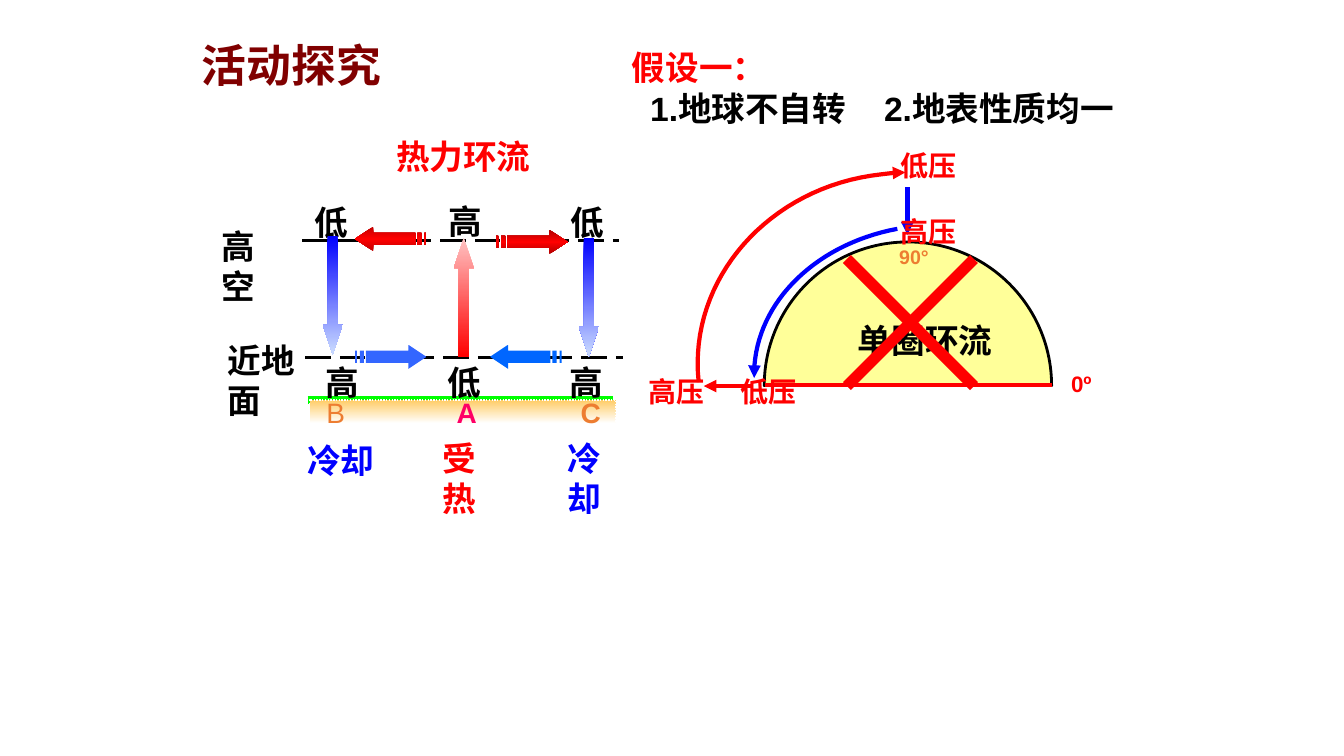
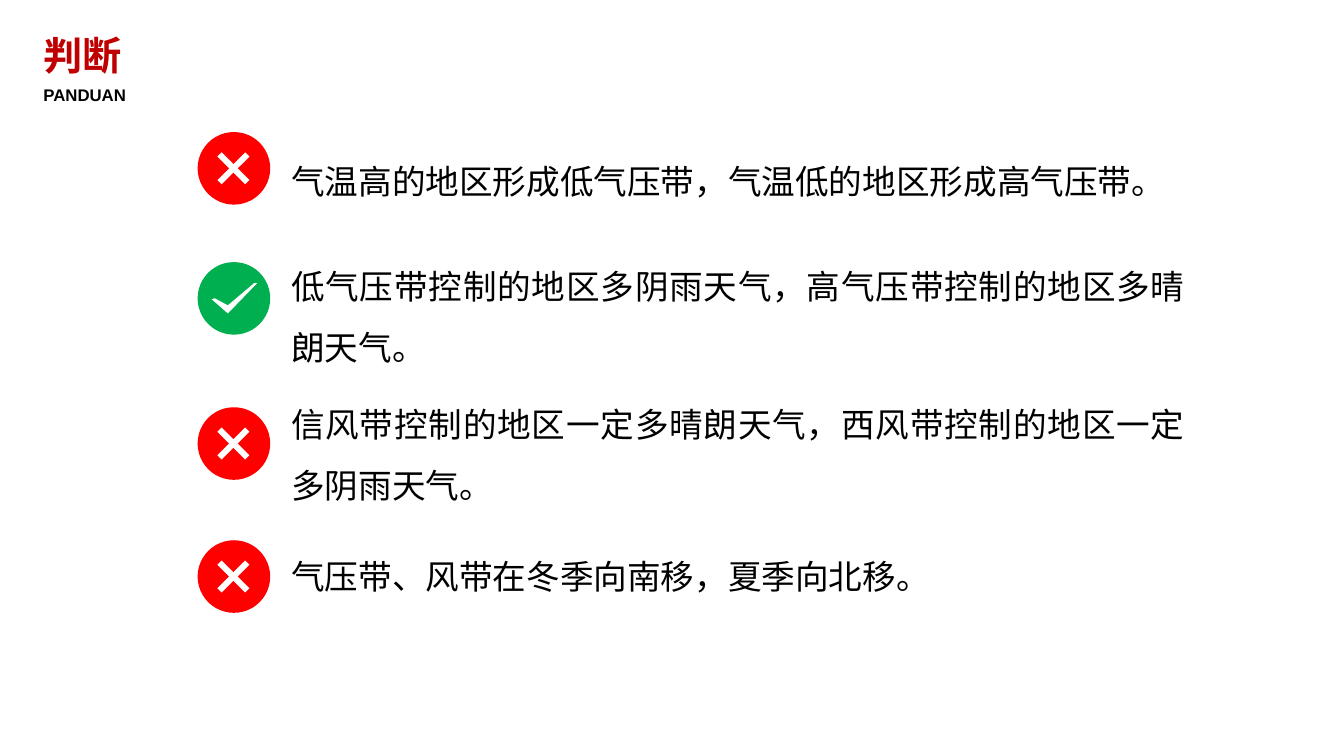
from typing import NamedTuple, Optional

from lxml import etree
from pptx import Presentation
from pptx.dml.color import RGBColor
from pptx.enum.dml import MSO_LINE
from pptx.enum.shapes import MSO_CONNECTOR, MSO_SHAPE
from pptx.enum.text import MSO_ANCHOR, PP_ALIGN
from pptx.oxml.ns import qn
from pptx.shapes.autoshape import Shape
from pptx.shapes.connector import Connector
from pptx.slide import Slide
from pptx.util import Pt

PX = 9144
LATIN = "Arial"
CJK = "Noto Sans CJK SC"
CJK_ALT = "Noto Sans CJK KR"
SERIF = "Times New Roman"
LEADING = 1.2
COLORS = {
    "black": "000000", "white": "FFFFFF", "red": "FF0000", "blue": "0000FF",
    "maroon": "800000", "crimson": "C00000", "orange": "ED7D31", "pink": "FF0066",
    "lime": "00FF00", "green": "00B050", "yellow": "FFFF99", "sand": "FFCC66",
    "pale_red": "FFC3C3", "pale_blue": "CCDDFF", "dark_red": "B20000",
    "brick": "C20000", "royal": "3366FF", "azure": "0066FF",
}
LEFT, CENTER, JUSTIFY = PP_ALIGN.LEFT, PP_ALIGN.CENTER, PP_ALIGN.JUSTIFY
TOP, MIDDLE = MSO_ANCHOR.TOP, MSO_ANCHOR.MIDDLE
LONG_DASH, DOTS = MSO_LINE.LONG_DASH, MSO_LINE.ROUND_DOT
STRAIGHT = MSO_CONNECTOR.STRAIGHT
OVAL, RECT, CHORD = MSO_SHAPE.OVAL, MSO_SHAPE.RECTANGLE, MSO_SHAPE.CHORD
UP, DOWN = MSO_SHAPE.UP_ARROW, MSO_SHAPE.DOWN_ARROW

Point = tuple[float, float]


class Box(NamedTuple):
    x: int
    y: int
    w: int
    h: int


class Label(NamedTuple):
    text: str
    box: Box
    color: str
    size: int = 24
    align: PP_ALIGN = LEFT
    bold: bool = True


class Wind(NamedTuple):
    x: int
    y: int
    leftward: bool
    stops: tuple[str, ...]


class Draft(NamedTuple):
    x: int
    y: int
    kind: MSO_SHAPE
    stops: tuple[str, ...]


class Statement(NamedTuple):
    text: str
    correct: bool
    mark_y: int
    box: Box
    leading: float = 1.8


def rgb(name: str) -> RGBColor:
    return RGBColor.from_string(COLORS[name])


def emu(*lengths: int) -> list[int]:
    return [n * PX for n in lengths]


def add_text(s: Slide, text: str, box: Box, *, color: str = "black", size: int = 24,
             bold: bool = True, align: PP_ALIGN = LEFT, anchor: MSO_ANCHOR = TOP,
             inset: bool = True, latin: str = LATIN, ea: str = CJK,
             leading: float = LEADING, indent: int = 0, tab: int = 0,
             first_color: Optional[str] = None) -> None:
    tf = s.shapes.add_textbox(*emu(*box)).text_frame
    tf.word_wrap = True
    tf.vertical_anchor = anchor
    if not inset:
        tf.margin_left = tf.margin_right = tf.margin_top = tf.margin_bottom = 0
    for i, line in enumerate(text.split("\n")):
        p = tf.add_paragraph() if i else tf.paragraphs[0]
        p.alignment = align
        p.line_spacing = Pt(round(size * leading, 1))
        p_pr = p._p.get_or_add_pPr()
        if i and indent:
            p_pr.set("indent", str(indent * PX))
        if i and tab:
            tabs = etree.SubElement(p_pr, qn("a:tabLst"))
            etree.SubElement(tabs, qn("a:tab"), pos=str(tab * PX), algn="l")
        r = p.add_run()
        r.text = line
        r.font.name, r.font.size, r.font.bold = latin, Pt(size), bold
        r.font.color.rgb = rgb(color if i or not first_color else first_color)
        etree.SubElement(r._r.get_or_add_rPr(), qn("a:ea"), typeface=ea)


def add_labels(s: Slide, labels: list[Label]) -> None:
    for lb in labels:
        add_text(s, lb.text, lb.box, color=lb.color, size=lb.size,
                 align=lb.align, bold=lb.bold)


def paint(sp: Shape, fill: Optional[str] = None, line: Optional[str] = None,
          width: int = 1) -> None:
    sp.shadow.inherit = False
    if fill:
        sp.fill.solid()
        sp.fill.fore_color.rgb = rgb(fill)
    else:
        sp.fill.background()
    if line:
        sp.line.color.rgb = rgb(line)
        sp.line.width = Pt(width)
    else:
        sp.line.fill.background()


def paint_gradient(sp: Shape, stops: tuple[str, ...]) -> None:
    paint(sp)
    sp.fill.gradient()
    sp.fill.gradient_angle = 270
    gs_list = sp._element.spPr.find(qn("a:gradFill")).find(qn("a:gsLst"))
    for gs in list(gs_list):
        gs_list.remove(gs)
    for i, name in enumerate(stops):
        gs = etree.SubElement(gs_list, qn("a:gs"), pos=str(100000 * i // (len(stops) - 1)))
        etree.SubElement(gs, qn("a:srgbClr"), val=COLORS[name])


def add_shape(s: Slide, kind: MSO_SHAPE, box: Box, fill: Optional[str] = None,
              line: Optional[str] = None, width: int = 1) -> Shape:
    sp = s.shapes.add_shape(kind, *emu(*box))
    paint(sp, fill, line, width)
    return sp


def add_outline(s: Slide, contours: list[list[Point]], close: bool = True) -> Shape:
    scaled = [[(x * PX, y * PX) for x, y in points] for points in contours]
    fb = s.shapes.build_freeform(*scaled[0][0])
    for i, points in enumerate(scaled):
        if i:
            fb.move_to(*points[0])
        fb.add_line_segments(points[1:], close=close)
    return fb.convert_to_shape()


def add_arrowhead(sp: Shape | Connector) -> None:
    etree.SubElement(sp._element.spPr.find(qn("a:ln")), qn("a:tailEnd"), type="triangle")


def add_line(s: Slide, start: tuple[int, int], end: tuple[int, int], color: str,
             width: float, dash: Optional[MSO_LINE] = None, arrow: bool = False) -> None:
    c = s.shapes.add_connector(STRAIGHT, *emu(*start, *end))
    c.line.color.rgb = rgb(color)
    c.line.width = Pt(width)
    if dash:
        c.line.dash_style = dash
    if arrow:
        add_arrowhead(c)
    etree.SubElement(c._element.spPr, qn("a:effectLst"))


def bezier(a: Point, b: Point, c: Point, d: Point, steps: int = 32) -> list[Point]:
    def at(t: float, i: int) -> float:
        u = 1 - t
        return u**3 * a[i] + 3 * u * u * t * b[i] + 3 * u * t * t * c[i] + t**3 * d[i]
    return [(at(k / steps, 0), at(k / steps, 1)) for k in range(steps + 1)]


def add_curve_arrow(s: Slide, points: list[Point], color: str) -> None:
    sp = add_outline(s, [points], close=False)
    paint(sp, line=color, width=3)
    add_arrowhead(sp)


def add_wind(s: Slide, wind: Wind) -> None:
    length, top, bottom = 71, 6, 18
    head = [(53, 0), (53, top), (11, top), (11, bottom), (53, bottom), (53, 24), (length, 12)]
    bars = [[(a, top), (a, bottom), (b, bottom), (b, top)] for a, b in ((5, 9), (0, 2))]
    contours = [[(wind.x + (length - x if wind.leftward else x), wind.y + y)
                 for x, y in points] for points in [head, *bars]]
    paint_gradient(add_outline(s, contours), wind.stops)


def add_draft(s: Slide, draft: Draft) -> None:
    sp = add_shape(s, draft.kind, Box(draft.x, draft.y, 20, 118))
    sp.adjustments[0], sp.adjustments[1] = 0.5, 1.5
    paint_gradient(sp, draft.stops)


def draw_thermal_circulation(s: Slide) -> None:
    add_line(s, (300, 239), (614, 239), "black", 2.25, LONG_DASH)
    add_line(s, (303, 355), (618, 355), "black", 2.25, LONG_DASH)
    add_line(s, (305, 397), (608, 397), "lime", 6)
    add_labels(s, [
        Label("近地面", Box(216, 332, 106, 91), "black"),
        Label("高空", Box(210, 219, 60, 91), "black"),
        Label("冷却", Box(295, 432, 136, 50), "blue"),
        Label("受热", Box(429, 429, 71, 91), "red"),
        Label("冷却", Box(553, 429, 71, 91), "blue"),
        Label("低", Box(302, 195, 52, 50), "black", align=CENTER),
        Label("高", Box(435, 194, 52, 50), "black", align=CENTER),
        Label("低", Box(556, 195, 52, 50), "black", align=CENTER),
    ])
    for wind in (
        Wind(492, 228, False, ("dark_red", "red", "dark_red")),
        Wind(352, 225, True, ("brick", "red", "brick")),
        Wind(352, 342, False, ("royal", "royal")),
        Wind(486, 342, True, ("azure", "azure")),
    ):
        add_wind(s, wind)
    ground = add_shape(s, RECT, Box(307, 397, 304, 23))
    paint_gradient(ground, ("sand", "white"))
    ground.line.color.rgb = rgb("white")
    ground.line.width = Pt(1)
    ground.line.dash_style = DOTS
    add_labels(s, [
        Label("A", Box(443, 387, 40, 44), "pink", 20),
        Label("B", Box(314, 387, 40, 44), "orange", 20, bold=False),
        Label("C", Box(566, 387, 40, 44), "orange", 20),
        Label("高", Box(313, 354, 53, 50), "black", align=CENTER),
        Label("低", Box(431, 354, 60, 50), "black", align=CENTER),
        Label("高", Box(548, 354, 68, 50), "black", align=CENTER),
    ])
    for draft in (
        Draft(450, 236, UP, ("pale_red", "red")),
        Draft(320, 234, DOWN, ("blue", "pale_blue")),
        Draft(574, 236, DOWN, ("blue", "pale_blue")),
    ):
        add_draft(s, draft)
    add_text(s, "热力环流", Box(383, 123, 158, 63), color="red", anchor=MIDDLE, ea=CJK_ALT)


def draw_single_cell(s: Slide) -> None:
    add_line(s, (745, 383), (698, 383), "red", 3, arrow=True)
    dome = add_shape(s, CHORD, Box(758, 240, 285, 285), "yellow", "black", 2)
    dome.adjustments[0], dome.adjustments[1] = 108.0, 0
    add_line(s, (759, 382), (1043, 382), "red", 3)
    add_text(s, "0º", Box(1045, 362, 55, 37), color="red", size=16, align=CENTER)
    add_labels(s, [Label("90°", Box(882, 238, 63, 34), "orange", 14)])
    add_line(s, (900, 186), (900, 233), "blue", 3, arrow=True)
    outer = bezier((693, 379), (682, 277), (763, 185), (874, 173))
    outer += bezier((874, 173), (882, 172), (890, 171), (898, 171), steps=4)[1:]
    add_curve_arrow(s, outer, "red")
    add_curve_arrow(s, bezier((890, 227), (805, 243), (746, 305), (748, 375)), "blue")
    add_labels(s, [Label("单圈环流", Box(841, 312, 176, 50), "black")])
    left, top, side = 840, 257, 126
    add_line(s, (left + side, top), (left, top + side), "red", 8)
    add_line(s, (left, top), (left + side, top + side), "red", 8)
    add_labels(s, [
        Label("低压", Box(725, 367, 92, 44), "red", 20),
        Label("低压", Box(883, 142, 92, 44), "red", 20),
        Label("高压", Box(633, 367, 94, 44), "red", 20),
        Label("高压", Box(883, 208, 94, 44), "red", 20),
    ])


def build_exploration(s: Slide) -> None:
    add_text(s, "活动探究", Box(179, 33, 220, 90), color="maroon", size=32, align=CENTER)
    draw_thermal_circulation(s)
    draw_single_cell(s)
    add_text(s, "假设一：\n1.地球不自转\t2.地表性质均一", Box(617, 42, 500, 91),
             first_color="red", indent=18, tab=251)


def add_mark(s: Slide, correct: bool, y: int) -> None:
    add_shape(s, OVAL, Box(196, y, 72, 72), "green" if correct else "red")
    if correct:
        tick = [(210, 37), (226, 51), (255, 21), (252, 21), (226, 43), (213, 36)]
        paint(add_outline(s, [[(x, y + dy) for x, dy in tick]]), "white")
        return
    for angle in (45, 135):
        add_shape(s, RECT, Box(212, y + 33, 39, 6), "white").rotation = angle


def build_judgement(s: Slide) -> None:
    add_text(s, "判断", Box(43, 31, 109, 47), color="crimson", size=28,
             anchor=MIDDLE, inset=False)
    add_text(s, "PANDUAN", Box(43, 84, 109, 20), size=12, anchor=MIDDLE, inset=False)
    for st in (
        Statement("气温高的地区形成低气压带，气温低的地区形成高气压带。",
                  False, 131, Box(279, 138, 906, 63)),
        Statement("低气压带控制的地区多阴雨天气，高气压带控制的地区多晴朗天气。",
                  True, 260, Box(279, 242, 906, 124)),
        Statement("信风带控制的地区一定多晴朗天气，西风带控制的地区一定多阴雨天气。",
                  False, 404, Box(279, 379, 906, 124)),
        Statement("气压带、风带在冬季向南移，夏季向北移。",
                  False, 536, Box(279, 547, 906, 50), LEADING),
    ):
        add_mark(s, st.correct, st.mark_y)
        add_text(s, st.text, st.box, bold=False, align=JUSTIFY, anchor=MIDDLE,
                 latin=SERIF, leading=st.leading)


def main() -> None:
    prs = Presentation()
    prs.slide_width, prs.slide_height = emu(1333, 750)
    for build in (build_exploration, build_judgement):
        build(prs.slides.add_slide(prs.slide_layouts[6]))
    prs.save("out.pptx")


if __name__ == "__main__":
    main()
